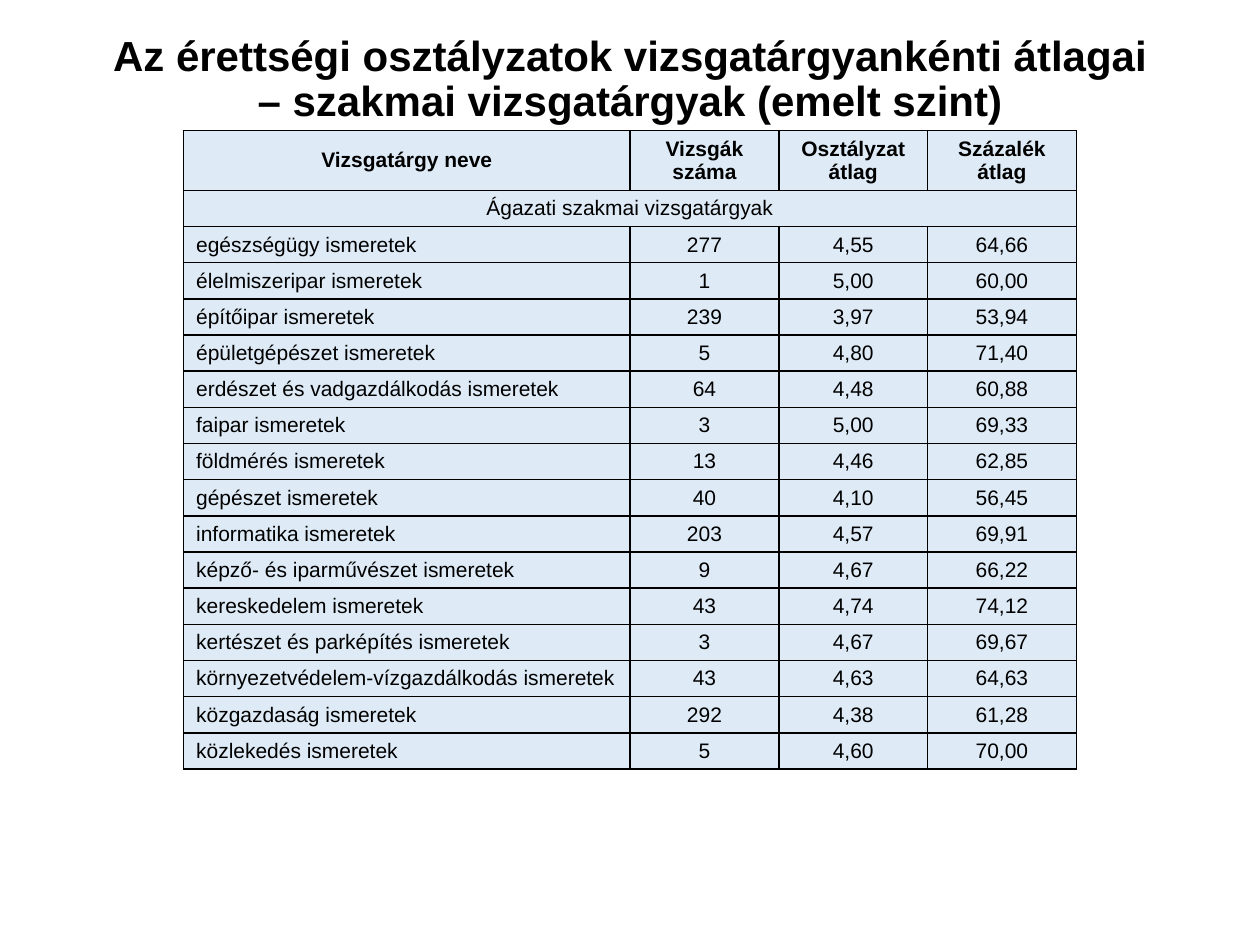
import dataclasses

import lxml.etree
import pptx
import pptx.dml.color
import pptx.enum.text
import pptx.oxml.ns
import pptx.util

Pt = pptx.util.Pt
Align = pptx.enum.text.PP_ALIGN
MIDDLE = pptx.enum.text.MSO_ANCHOR.MIDDLE


@dataclasses.dataclass(frozen=True)
class Theme:
    font: str = "Arial"
    ink: str = "000000"
    cell: str = "DEEBF7"
    title_size: int = 24
    table_size: int = 12
    border: int = 1


TITLE = "Az érettségi osztályzatok vizsgatárgyankénti átlagai – szakmai vizsgatárgyak (emelt szint)"
HEADERS = ["Vizsgatárgy neve", "Vizsgák száma", "Osztályzat átlag", "Százalék átlag"]
SECTION = "Ágazati szakmai vizsgatárgyak"
SUBJECTS = [
    ("egészségügy ismeretek", "277", "4,55", "64,66"),
    ("élelmiszeripar ismeretek", "1", "5,00", "60,00"),
    ("építőipar ismeretek", "239", "3,97", "53,94"),
    ("épületgépészet ismeretek", "5", "4,80", "71,40"),
    ("erdészet és vadgazdálkodás ismeretek", "64", "4,48", "60,88"),
    ("faipar ismeretek", "3", "5,00", "69,33"),
    ("földmérés ismeretek", "13", "4,46", "62,85"),
    ("gépészet ismeretek", "40", "4,10", "56,45"),
    ("informatika ismeretek", "203", "4,57", "69,91"),
    ("képző- és iparművészet ismeretek", "9", "4,67", "66,22"),
    ("kereskedelem ismeretek", "43", "4,74", "74,12"),
    ("kertészet és parképítés ismeretek", "3", "4,67", "69,67"),
    ("környezetvédelem-vízgazdálkodás ismeretek", "43", "4,63", "64,63"),
    ("közgazdaság ismeretek", "292", "4,38", "61,28"),
    ("közlekedés ismeretek", "5", "4,60", "70,00"),
]


def write_text(frame, text, *, font, size, color, bold=False, align=Align.CENTER, spacing=None):
    para = frame.paragraphs[0]
    para.alignment = align
    if spacing:
        para.line_spacing = spacing
    span = para.add_run()
    span.text = text
    span.font.name = font
    span.font.size = Pt(size)
    span.font.bold = bold
    span.font.color.rgb = pptx.dml.color.RGBColor.from_string(color)


class SlideBuilder:
    def __init__(self, slide, theme):
        self.slide = slide
        self.theme = theme

    def title(self, text, left, top, width, height):
        box = self.slide.shapes.title
        box.left, box.top, box.width, box.height = Pt(left), Pt(top), Pt(width), Pt(height)
        frame = box.text_frame
        frame.word_wrap = True
        frame.auto_size = pptx.enum.text.MSO_AUTO_SIZE.NONE
        frame.vertical_anchor = MIDDLE
        write_text(frame, text, font=self.theme.font, size=self.theme.title_size,
                   color=self.theme.ink, bold=True, spacing=0.9)

    def borders(self, cell):
        properties = cell._tc.get_or_add_tcPr()
        qn = pptx.oxml.ns.qn
        for index, side in enumerate(("a:lnL", "a:lnR", "a:lnT", "a:lnB")):
            line = lxml.etree.Element(qn(side), w=str(Pt(self.theme.border)))
            fill = lxml.etree.SubElement(line, qn("a:solidFill"))
            lxml.etree.SubElement(fill, qn("a:srgbClr"), val=self.theme.ink)
            properties.insert(index, line)

    def cell(self, cell, text, **text_format):
        cell.vertical_anchor = MIDDLE
        cell.fill.solid()
        cell.fill.fore_color.rgb = pptx.dml.color.RGBColor.from_string(self.theme.cell)
        self.borders(cell)
        if text:
            write_text(cell.text_frame, text, font=self.theme.font,
                       size=self.theme.table_size, color=self.theme.ink, **text_format)

    def table(self, headers, section, records, left, top, widths, header_height, row_height):
        rows = [headers, [section] + [""] * (len(headers) - 1), *records]
        heights = [header_height] + [row_height] * (len(rows) - 1)
        table = self.slide.shapes.add_table(
            len(rows), len(headers), Pt(left), Pt(top), Pt(sum(widths)), Pt(sum(heights))).table
        for column, width in zip(table.columns, widths):
            column.width = Pt(width)
        for row, height in zip(table.rows, heights):
            row.height = Pt(height)
        for r, texts in enumerate(rows):
            for c, text in enumerate(texts):
                is_name = r > 1 and c == 0
                self.cell(table.cell(r, c), text, bold=r == 0,
                          align=Align.LEFT if is_name else Align.CENTER)
        # The section heading runs across all columns
        table.cell(1, 0).merge(table.cell(1, len(headers) - 1))


def main():
    deck = pptx.Presentation()
    deck.slide_width, deck.slide_height = Pt(720), Pt(540)
    page = SlideBuilder(deck.slides.add_slide(deck.slide_layouts[5]), Theme())

    # Heading
    page.title(TITLE, left=49.5, top=-6.5, width=621, height=104.5)

    # Exam results by subject
    page.table(HEADERS, SECTION, SUBJECTS, left=104.9, top=74.6,
               widths=[255.2, 85, 85, 85], header_height=34.2, row_height=20.66)

    deck.save("out.pptx")


if __name__ == "__main__":
    main()
